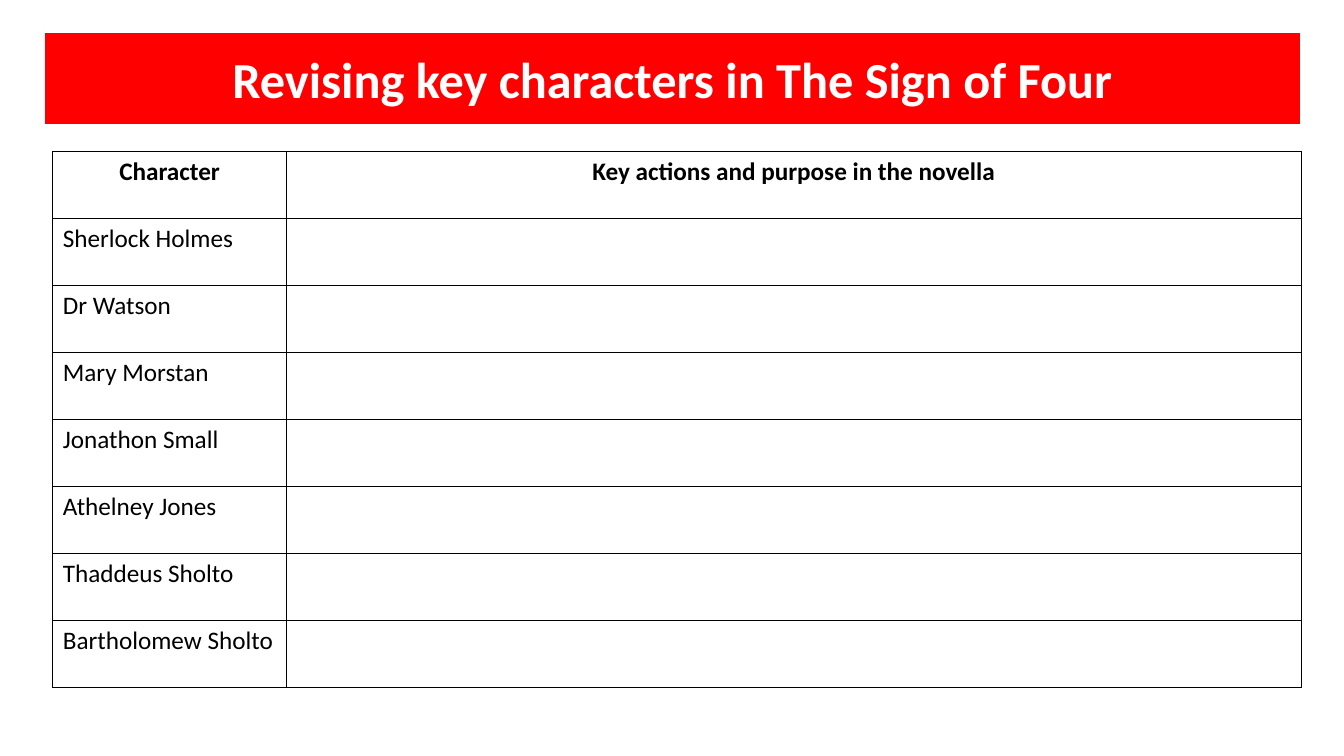
from dataclasses import dataclass

from lxml.etree import SubElement
from pptx import Presentation
from pptx.dml.color import RGBColor
from pptx.enum.shapes import MSO_SHAPE
from pptx.enum.text import MSO_ANCHOR, PP_ALIGN
from pptx.oxml.ns import qn
from pptx.slide import Slide
from pptx.table import _Cell as Cell
from pptx.text.text import TextFrame
from pptx.util import Cm, Pt

COLOURS = {"banner": "FF0000", "paper": "FFFFFF", "ink": "000000"}
FONT = "Calibri"
COLUMN_WIDTHS = (Cm(5.89), Cm(25.57))
ROW_HEIGHT = Cm(1.688)


@dataclass(frozen=True)
class CharacterRow:
    character: str
    purpose: str = ""
    header: bool = False


ROWS = [
    CharacterRow("Character", "Key actions and purpose in the novella", header=True),
    CharacterRow("Sherlock Holmes"),
    CharacterRow("Dr Watson"),
    CharacterRow("Mary Morstan"),
    CharacterRow("Jonathon Small"),
    CharacterRow("Athelney Jones"),
    CharacterRow("Thaddeus Sholto"),
    CharacterRow("Bartholomew Sholto"),
]


def rgb(name: str) -> RGBColor:
    return RGBColor.from_string(COLOURS[name])


def write(tf: TextFrame, text: str, size: int, colour: str, bold: bool, align: PP_ALIGN) -> None:
    p = tf.paragraphs[0]
    p.alignment = align
    if not text:
        p.font.size = Pt(size)
        return
    r = p.add_run()
    r.text = text
    r.font.name = FONT
    r.font.size = Pt(size)
    r.font.bold = bold
    r.font.color.rgb = rgb(colour)


def set_borders(cell: Cell) -> None:
    """Rule all four sides; call before filling, as borders precede the fill in the XML."""
    tc_pr = cell._tc.get_or_add_tcPr()
    for side in ("a:lnL", "a:lnR", "a:lnT", "a:lnB"):
        ln = SubElement(tc_pr, qn(side), w=str(Pt(1)))
        fill = SubElement(ln, qn("a:solidFill"))
        SubElement(fill, qn("a:srgbClr"), val=COLOURS["ink"])


def add_banner(s: Slide, title: str) -> None:
    sp = s.shapes.add_shape(MSO_SHAPE.RECTANGLE, Cm(1.1), Cm(0.8), Cm(31.7), Cm(2.35))
    sp.shadow.inherit = False
    sp.fill.solid()
    sp.fill.fore_color.rgb = rgb("banner")
    sp.line.color.rgb = rgb("paper")
    sp.line.width = Pt(1.5)
    sp.text_frame.vertical_anchor = MSO_ANCHOR.MIDDLE
    write(sp.text_frame, title, 36, "paper", True, PP_ALIGN.CENTER)


def add_character_table(s: Slide, rows: list[CharacterRow]) -> None:
    table = s.shapes.add_table(
        len(rows), len(COLUMN_WIDTHS), Cm(1.33), Cm(3.82),
        sum(COLUMN_WIDTHS), ROW_HEIGHT * len(rows),
    ).table
    table.horz_banding = False
    for column, width in zip(table.columns, COLUMN_WIDTHS):
        column.width = width
    for i, row in enumerate(rows):
        table.rows[i].height = ROW_HEIGHT
        align = PP_ALIGN.CENTER if row.header else PP_ALIGN.LEFT
        for j, text in enumerate((row.character, row.purpose)):
            cell = table.cell(i, j)
            set_borders(cell)
            cell.fill.background()
            write(cell.text_frame, text, 18, "ink", row.header, align)


def main() -> None:
    prs = Presentation()
    prs.slide_width, prs.slide_height = Cm(33.87), Cm(19.05)
    s = prs.slides.add_slide(prs.slide_layouts[6])
    add_banner(s, "Revising key characters in The Sign of Four")
    add_character_table(s, ROWS)
    prs.save("out.pptx")


if __name__ == "__main__":
    main()
